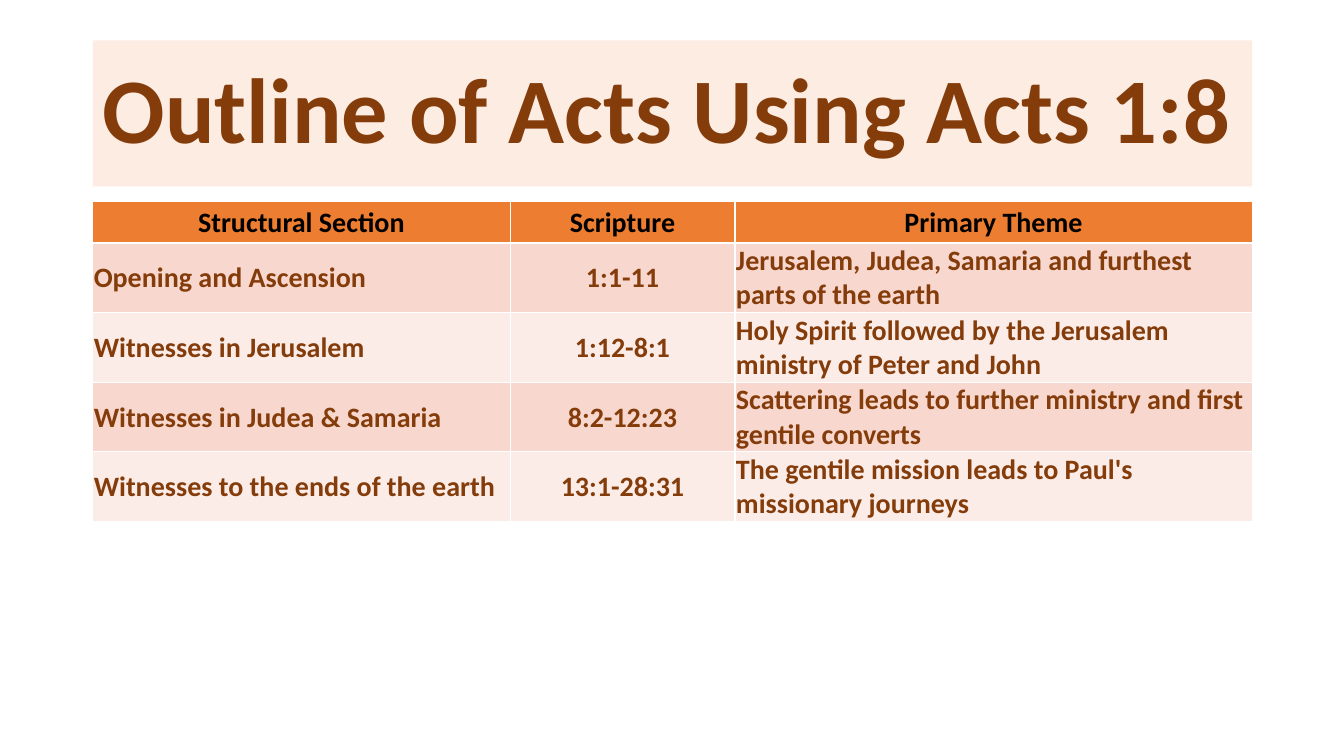
from lxml import etree
from pptx import Presentation
from pptx.dml.color import RGBColor
from pptx.enum import text
from pptx.oxml import ns
from pptx.util import Inches, Pt

# Content
HEADING = "Outline of Acts Using Acts 1:8"
OUTLINE = [
    ("Structural Section", "Scripture", "Primary Theme"),
    ("Opening and Ascension", "1:1-11",
     "Jerusalem, Judea, Samaria and furthest parts of the earth"),
    ("Witnesses in Jerusalem", "1:12-8:1",
     "Holy Spirit followed by the Jerusalem ministry of Peter and John"),
    ("Witnesses in Judea & Samaria", "8:2-12:23",
     "Scattering leads to further ministry and first gentile converts"),
    ("Witnesses to the ends of the earth", "13:1-28:31",
     "The gentile mission leads to Paul's missionary journeys"),
]

# Colours and measures
BROWN = RGBColor(0x84, 0x3C, 0x0B)
BLACK = RGBColor(0x00, 0x00, 0x00)
PEACH = RGBColor(0xFB, 0xE5, 0xD6)
ORANGE = RGBColor(0xED, 0x7D, 0x31)
BANDS = [RGBColor(0xFC, 0xEC, 0xE8), RGBColor(0xF8, 0xD7, 0xCE)]
LEFT, WIDTH = Inches(0.92), Inches(11.5)
COLUMN_WIDTHS = [4.14, 2.23, 5.13]
ROW_HEIGHT = Inches(0.41)
TABLE_HEIGHT = Inches(3.11)


def write(frame, words, size=20, color=BROWN, align=text.PP_ALIGN.LEFT, spacing=None):
    frame.text = words
    line = frame.paragraphs[0]
    line.alignment = align
    line.line_spacing = spacing
    font = line.runs[0].font
    font.name, font.size, font.bold = "Calibri", Pt(size), True
    font.color.rgb = color


prs = Presentation()
prs.slide_width, prs.slide_height = Inches(13.33), Inches(7.5)
slide = prs.slides.add_slide(prs.slide_layouts[5])

# Title on a translucent band
heading = slide.shapes.title
heading.left, heading.top = LEFT, Inches(0.4)
heading.width, heading.height = WIDTH, Inches(1.45)
heading.fill.solid()
heading.fill.fore_color.rgb = PEACH
band_color = heading.fill._xPr.find(".//" + ns.qn("a:srgbClr"))
etree.SubElement(band_color, ns.qn("a:alpha"), val="70000")
write(heading.text_frame, HEADING, size=66, spacing=0.9)
heading.text_frame.vertical_anchor = text.MSO_ANCHOR.MIDDLE
heading.text_frame.auto_size = text.MSO_AUTO_SIZE.NONE

# Outline table
outline_frame = slide.shapes.add_table(
    len(OUTLINE), len(COLUMN_WIDTHS), LEFT, Inches(2), WIDTH, TABLE_HEIGHT)
outline = outline_frame.table
for column, width in zip(outline.columns, COLUMN_WIDTHS):
    column.width = Inches(width)
for r, entries in enumerate(OUTLINE):
    outline.rows[r].height = ROW_HEIGHT
    for c, words in enumerate(entries):
        cell = outline.cell(r, c)
        cell.fill.solid()
        cell.fill.fore_color.rgb = BANDS[r % 2] if r else ORANGE
        cell.vertical_anchor = text.MSO_ANCHOR.MIDDLE
        cell.margin_left = cell.margin_top = cell.margin_right = Inches(0.01)
        cell.margin_bottom = 0
        centred = r == 0 or c == 1
        write(cell.text_frame, words, color=BROWN if r else BLACK,
              align=text.PP_ALIGN.CENTER if centred else text.PP_ALIGN.LEFT)
outline_frame.height = TABLE_HEIGHT

prs.save("out.pptx")
